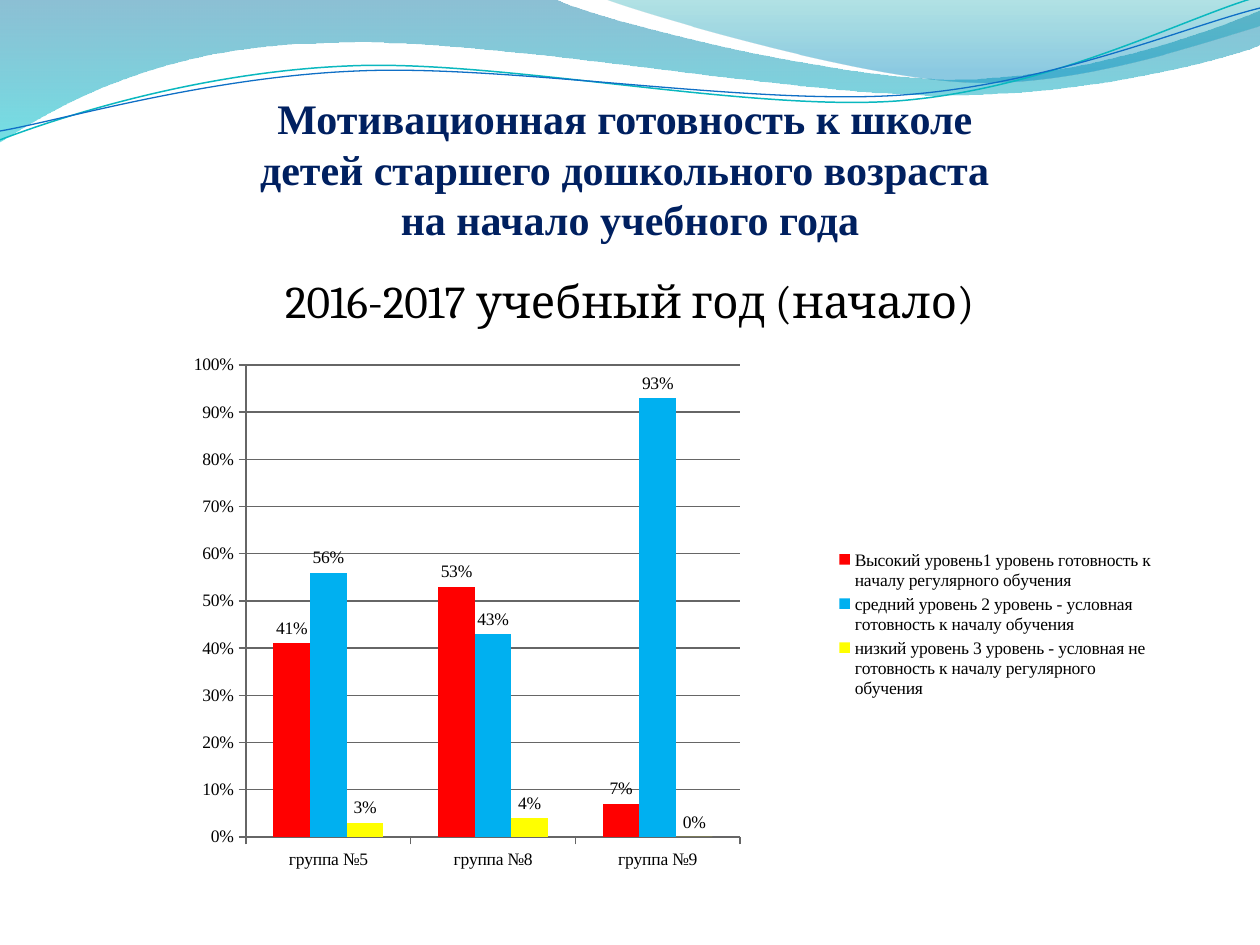
import math

import pptx
import pptx.chart.data
import pptx.dml.color
import pptx.enum.chart
import pptx.enum.text
import pptx.oxml
import pptx.oxml.ns
import pptx.util
from lxml import etree

SCALE = 914400 / 126
COLORS = {
    "navy": "002060", "black": "000000", "grid": "666666",
    "red": "FF0000", "blue": "00B0F0", "yellow": "FFFF00",
    "teal_line": "0AB8BF", "blue_line": "0F6FC6",
    "deep": "0074A1", "aqua": "00C6CF", "teal": "00A1A9", "sea": "008BBF",
}
SERIF = "Times New Roman"
CHART_BOX = (134, 344, 1032, 562)
PLOT_BOX = (112, 21, 494, 472)
LEGEND_BOX = (701, 202, 320, 157)

TITLE = ["Мотивационная готовность к школе ",
         "детей старшего дошкольного возраста ",
         "на начало учебного года"]
SUBTITLE = "2016-2017 учебный год (начало)"
GROUPS = ["группа №5", "группа №8", "группа №9"]
LEVELS = [
    ("Высокий уровень1 уровень готовность к началу регулярного обучения",
     (0.41, 0.53, 0.07), "red"),
    ("средний уровень 2 уровень - условная готовность к началу обучения",
     (0.56, 0.43, 0.93), "blue"),
    ("низкий уровень 3 уровень - условная не готовность к началу регулярного обучения",
     (0.03, 0.04, 0), "yellow"),
]

TILT = -2.7
WAVES = [
    {"start": (0, 0), "stops": [(0, "deep", 45), (1, "aqua", 55)], "parts": [
        [(554, -1)],
        [(600, 21), (837, 79), (955, 79)],
        [(1075, 79), (1207, 33), (1260, 11)],
        [(1261, 45)],
        [(1238, 55), (1096, 96), (940, 95)],
        [(784, 95), (481, 35), (324, 43)],
        [(163, 45), (58, 105), (-1, 142)],
        [(0, 0)]]},
    {"start": (604, -1), "stops": [(0, "teal", 30), (0.8, "sea", 45)], "parts": [
        [(642, 14), (859, 78), (969, 82)],
        [(1079, 87), (1211, 40), (1260, 26)],
        [(1260, 0)],
        [(604, -1)]]},
    {"start": (0, 140), "line": ("teal_line", 0.85), "center": (629, 72), "parts": [
        [(60, 117), (199, 72), (349, 66)],
        [(498, 59), (747, 112), (898, 101)],
        [(1050, 89), (1182, 19), (1257, -3)]]},
    {"start": (0, 131), "line": ("blue_line", 0.75), "center": (629, 74), "parts": [
        [(59, 121), (207, 77), (357, 71)],
        [(508, 64), (752, 106), (903, 95)],
        [(1053, 84), (1187, 26), (1260, 8)]]},
]


def px(value):
    return pptx.util.Emu(round(value * SCALE))


def rgb(name):
    return pptx.dml.color.RGBColor.from_string(COLORS[name])


def level(point, center):
    angle = math.radians(-TILT)
    x, y = point[0] - center[0], point[1] - center[1]
    return (center[0] + x * math.cos(angle) - y * math.sin(angle),
            center[1] + x * math.sin(angle) + y * math.cos(angle))


def bend(shape, parts):
    lines = list(shape.element.iter(pptx.oxml.ns.qn("a:lnTo")))
    for part in parts:
        group, lines = lines[:len(part)], lines[len(part):]
        if len(group) == 3:
            curve = etree.Element(pptx.oxml.ns.qn("a:cubicBezTo"))
            group[0].addprevious(curve)
            for line in group:
                curve.append(line[0])
                line.getparent().remove(line)


def add_wave(page, wave):
    points = [wave["start"], *(point for part in wave["parts"] for point in part)]
    if "center" in wave:
        points = [level(point, wave["center"]) for point in points]
    points = [(px(x), px(y)) for x, y in points]
    builder = page.shapes.build_freeform(*points[0], scale=1.0)
    builder.add_line_segments(points[1:], close="stops" in wave)
    shape = builder.convert_to_shape()
    bend(shape, wave["parts"])
    shape.shadow.inherit = False
    if "line" in wave:
        color, width = wave["line"]
        shape.rotation = TILT
        shape.fill.background()
        shape.line.color.rgb = rgb(color)
        shape.line.width = pptx.util.Pt(width)
        return
    shape.line.fill.background()
    shape.fill.gradient()
    shape.fill.gradient_angle = 270
    for stop, (position, color, _) in zip(shape.fill.gradient_stops, wave["stops"]):
        stop.position = position
        stop.color.rgb = rgb(color)
    tones = shape.element.iter(pptx.oxml.ns.qn("a:srgbClr"))
    for tone, (_, _, opacity) in zip(tones, wave["stops"]):
        etree.SubElement(tone, pptx.oxml.ns.qn("a:alpha"), val=str(opacity * 1000))


def add_span(para, text, size, font, color, bold=False):
    span = para.add_run()
    span.text = text
    span.font.size = pptx.util.Pt(size)
    span.font.name = font
    span.font.bold = bold
    span.font.color.rgb = rgb(color)


def set_layout(chart, tag, index, box, inner=False):
    owner = chart.element.find(".//" + pptx.oxml.ns.qn(tag))
    for old in owner.findall(pptx.oxml.ns.qn("c:layout")):
        owner.remove(old)
    layout = etree.Element(pptx.oxml.ns.qn("c:layout"))
    manual = etree.SubElement(layout, pptx.oxml.ns.qn("c:manualLayout"))
    settings = [("layoutTarget", "inner")] if inner else []
    shares = [length / CHART_BOX[2 + i % 2] for i, length in enumerate(box)]
    settings += [("xMode", "edge"), ("yMode", "edge"), *zip("xywh", shares)]
    for name, value in settings:
        etree.SubElement(manual, pptx.oxml.ns.qn("c:" + name), val=str(value))
    owner.insert(index, layout)


def add_levels_chart(page):
    data = pptx.chart.data.CategoryChartData(number_format="0%")
    data.categories = GROUPS
    for name, values, _ in LEVELS:
        data.add_series(name, values)
    kind = pptx.enum.chart.XL_CHART_TYPE.COLUMN_CLUSTERED
    chart = page.shapes.add_chart(kind, *map(px, CHART_BOX), data).chart
    chart.has_title = False
    chart.font.name = SERIF
    chart.font.size = pptx.util.Pt(10)
    chart.font.color.rgb = rgb("black")

    plot = chart.plots[0]
    plot.vary_by_categories = False
    plot.gap_width = 150
    plot.overlap = 0
    for series, (_, _, color) in zip(plot.series, LEVELS):
        series.format.fill.solid()
        series.format.fill.fore_color.rgb = rgb(color)
        labels = series.data_labels
        labels.show_value = True
        labels.number_format = "0%"
        labels.number_format_is_linked = False
        labels.position = pptx.enum.chart.XL_LABEL_POSITION.OUTSIDE_END

    values = chart.value_axis
    values.minimum_scale, values.maximum_scale, values.major_unit = 0, 1, 0.1
    values.has_major_gridlines = True
    values.tick_labels.number_format = "0%"
    values.tick_labels.number_format_is_linked = False
    for axis in (values, chart.category_axis):
        axis.major_tick_mark = pptx.enum.chart.XL_TICK_MARK.OUTSIDE
    for part in (values, chart.category_axis, values.major_gridlines):
        part.format.line.color.rgb = rgb("grid")
        part.format.line.width = pptx.util.Pt(0.75)

    chart.has_legend = True
    chart.legend.position = pptx.enum.chart.XL_LEGEND_POSITION.RIGHT
    chart.legend.include_in_layout = False
    set_layout(chart, "c:plotArea", 0, PLOT_BOX, inner=True)
    set_layout(chart, "c:legend", 1, LEGEND_BOX)


def main():
    deck = pptx.Presentation()
    deck.slide_width, deck.slide_height = px(1260), px(945)
    page = deck.slides.add_slide(deck.slide_layouts[5])
    for wave in WAVES:
        add_wave(page, wave)

    box = page.shapes.add_textbox(px(63), px(267), px(1134), px(605))
    box.text_frame.word_wrap = True
    para = box.text_frame.paragraphs[0]
    para.alignment = pptx.enum.text.PP_ALIGN.CENTER
    para.space_before = pptx.util.Pt(2)
    add_span(para, SUBTITLE, 26, "Cambria", "black")

    title = page.shapes.title
    title.left, title.top, title.width, title.height = map(px, (63, 97, 1134, 147))
    title.element.getparent().append(title.element)
    frame = title.text_frame
    frame.word_wrap = True
    frame.auto_size = pptx.enum.text.MSO_AUTO_SIZE.NONE
    frame.vertical_anchor = pptx.enum.text.MSO_ANCHOR.BOTTOM
    frame.margin_left = frame.margin_right = frame.margin_bottom = 0
    frame.margin_top = px(6)
    para = frame.paragraphs[0]
    para.alignment = pptx.enum.text.PP_ALIGN.CENTER
    for index, line in enumerate(TITLE):
        if index:
            para.add_line_break()
        add_span(para, line, 24, SERIF, "navy", bold=True)

    add_levels_chart(page)
    deck.save("out.pptx")


if __name__ == "__main__":
    main()
